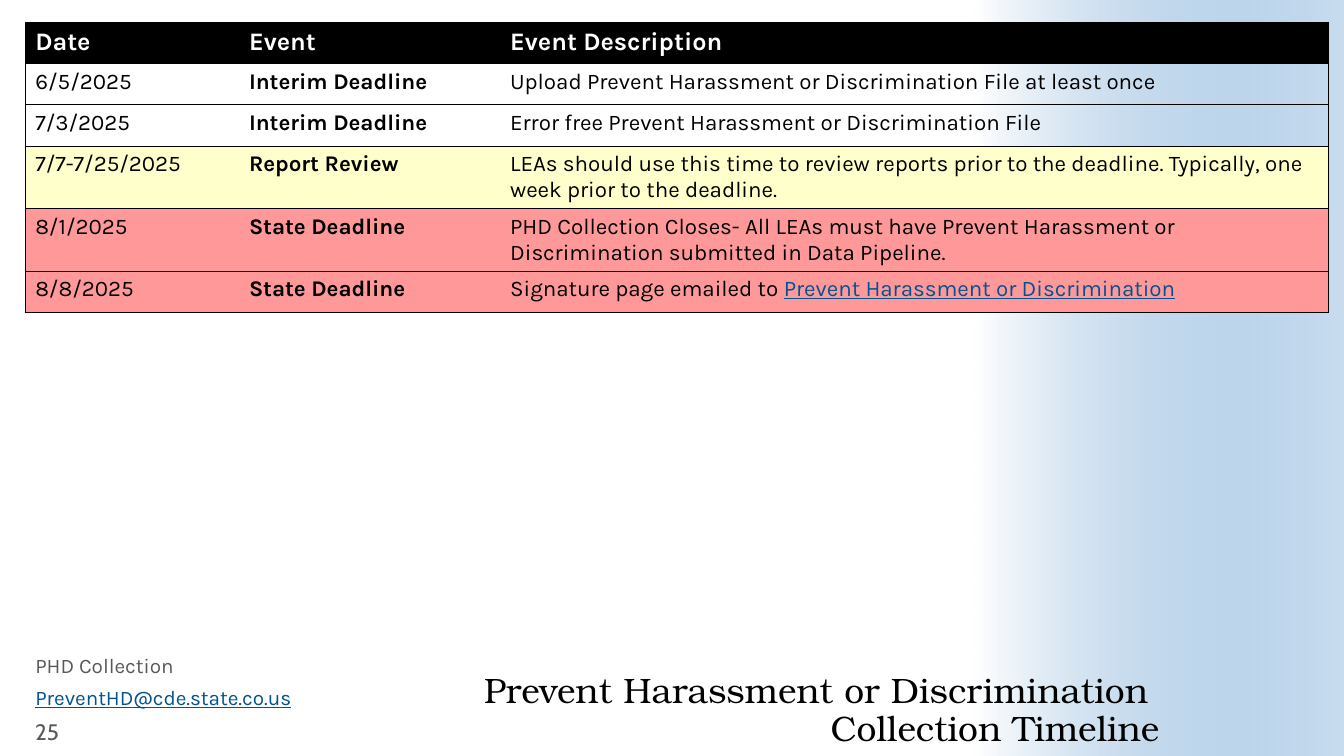
from dataclasses import dataclass

from lxml.etree import SubElement
from pptx import Presentation
from pptx.dml.color import RGBColor as RGB
from pptx.enum.shapes import MSO_SHAPE as Shape
from pptx.enum.text import MSO_ANCHOR as Anchor, MSO_AUTO_SIZE as AutoSize, PP_ALIGN as Align
from pptx.oxml.ns import qn
from pptx.util import Inches, Pt


@dataclass(frozen=True)
class Theme:
    title_font: str = "TeX Gyre Bonum"
    body_font: str = "Karla"
    number_font: str = "Cabin"
    title_size: float = 25.2
    header_size: float = 18
    body_size: float = 16
    contact_size: float = 14.8
    black: str = "000000"
    white: str = "FFFFFF"
    gray: str = "595959"
    link: str = "005390"
    blue: str = "488BC9"
    review: str = "FFFFCC"
    deadline: str = "FF9999"


class TimelineSlide:
    """Builds the parts of one slide in a shared theme."""

    def __init__(self, presentation, theme):
        self.theme = theme
        self.slide = presentation.slides.add_slide(presentation.slide_layouts[3])

    def place(self, shape, left, top, width, height):
        shape.left, shape.top = Inches(left), Inches(top)
        shape.width, shape.height = Inches(width), Inches(height)

    def style(self, font, name, size, color, bold=False):
        font.name, font.size, font.bold = name, Pt(size), bold
        font.color.rgb = RGB.from_string(color)

    def side_band(self, left, top, width, height):
        band = self.slide.shapes.add_shape(
            Shape.RECTANGLE, Inches(left), Inches(top), Inches(width), Inches(height))
        band.rotation = 270
        band.shadow.inherit = False
        band.line.fill.background()
        band.fill.gradient()
        band.fill.gradient_angle = 270
        start, end = band.fill.gradient_stops
        start.position, end.position = 0, 1
        start.color.rgb = RGB.from_string(self.theme.white)
        end.color.rgb = RGB.from_string(self.theme.blue)
        blue = list(band.element.spPr.iter(qn("a:srgbClr")))[-1]
        SubElement(blue, qn("a:alpha"), val="30000")
        self.slide.shapes._spTree.insert(2, band.element)

    def title(self, text, *box):
        title = self.slide.shapes.title
        self.place(title, *box)
        frame = title.text_frame
        frame.text = text
        frame.word_wrap, frame.auto_size = True, AutoSize.NONE
        frame.vertical_anchor = Anchor.BOTTOM
        frame.margin_left = frame.margin_right = frame.margin_top = frame.margin_bottom = 0
        line = frame.paragraphs[0]
        line.alignment, line.line_spacing = Align.RIGHT, 0.9
        self.style(line.font, self.theme.title_font, self.theme.title_size, self.theme.black)

    def contact(self, index, text, color, underline, *box):
        contact = self.slide.placeholders[index]
        self.place(contact, *box)
        frame = contact.text_frame
        frame.text = text
        frame.word_wrap, frame.auto_size = True, AutoSize.NONE
        frame.vertical_anchor = Anchor.TOP
        line = frame.paragraphs[0]
        properties = line._p.get_or_add_pPr()
        properties.set("marL", "0")
        properties.set("indent", "0")
        SubElement(properties, qn("a:buNone"))
        line.line_spacing, line.space_before = 0.8, Pt(0)
        self.style(line.font, self.theme.body_font, self.theme.contact_size, color)
        line.font.underline = underline

    def page_number(self, text, left, top, width, height):
        number = self.slide.shapes.add_textbox(
            Inches(left), Inches(top), Inches(width), Inches(height))
        frame = number.text_frame
        frame.text = text
        frame.word_wrap, frame.vertical_anchor = True, Anchor.MIDDLE
        self.style(frame.paragraphs[0].font, self.theme.number_font,
                   self.theme.body_size, self.theme.gray)

    def borders(self, cell, shown):
        properties = cell._tc.get_or_add_tcPr()
        for side in "LRTB":
            edge = SubElement(properties, qn(f"a:ln{side}"), w=str(Pt(0.5)))
            if side in shown:
                paint = SubElement(edge, qn("a:solidFill"))
                SubElement(paint, qn("a:srgbClr"), val=self.theme.black)
            else:
                SubElement(edge, qn("a:noFill"))

    def cell(self, cell, text, link, fill, size, color, bold, edges):
        self.borders(cell, edges)
        if fill:
            cell.fill.solid()
            cell.fill.fore_color.rgb = RGB.from_string(fill)
        else:
            cell.fill.background()
        cell.text = text
        line = cell.text_frame.paragraphs[0]
        self.style(line.font, self.theme.body_font, size, color, bold)
        if link:
            address = line.add_run()
            address.text = link
            address.font.underline = True
            address.font.color.rgb = RGB.from_string(self.theme.link)

    def timeline(self, header, events, widths, left, top, row_height):
        theme = self.theme
        rows = [(theme.black, *header)] + events
        table = self.slide.shapes.add_table(
            len(rows), len(widths), Inches(left), Inches(top),
            Inches(sum(widths)), Inches(row_height * len(rows))).table
        table.first_row = table.horz_banding = False
        for column, width in zip(table.columns, widths):
            column.width = Inches(width)
        for r, (fill, *texts) in enumerate(rows):
            table.rows[r].height = Inches(row_height)
            size, color = ((theme.body_size, theme.black) if r
                           else (theme.header_size, theme.white))
            for c, edges in enumerate(("LTB", "TB", "RTB")):
                text, _, link = texts[c].partition("|")
                self.cell(table.cell(r, c), text, link, fill, size, color,
                          r == 0 or c == 1, edges)


def main():
    presentation = Presentation()
    presentation.slide_width, presentation.slide_height = Inches(13.33), Inches(7.5)
    theme = Theme()
    page = TimelineSlide(presentation, theme)
    page.side_band(7.75, 1.92, 7.5, 3.66)
    page.title("Prevent Harassment or Discrimination \v Collection Timeline",
               4.26, 6.45, 7.24, 0.98)
    events = [
        (None, "6/5/2025", "Interim Deadline",
         "Upload Prevent Harassment or Discrimination File at least once"),
        (None, "7/3/2025", "Interim Deadline",
         "Error free Prevent Harassment or Discrimination File"),
        (theme.review, "7/7-7/25/2025", "Report Review",
         "LEAs should use this time to review reports prior to the deadline. "
         "Typically, one week prior to the deadline."),
        (theme.deadline, "8/1/2025", "State Deadline",
         "PHD Collection Closes- All LEAs must have Prevent Harassment or "
         "Discrimination submitted in Data Pipeline."),
        (theme.deadline, "8/8/2025", "State Deadline",
         "Signature page emailed to |Prevent Harassment or Discrimination"),
    ]
    page.timeline(("Date", "Event", "Event Description"), events,
                  (2.12, 2.59, 8.22), 0.25, 0.22, 0.41)
    page.contact(1, "PHD Collection", theme.gray, False, 0.25, 6.47, 3.89, 0.31)
    page.contact(2, "PreventHD@cde.state.co.us", theme.link, True, 0.25, 6.79, 3.89, 0.31)
    page.page_number("25", 0.25, 7.1, 0.85, 0.31)
    presentation.save("out.pptx")


if __name__ == "__main__":
    main()
